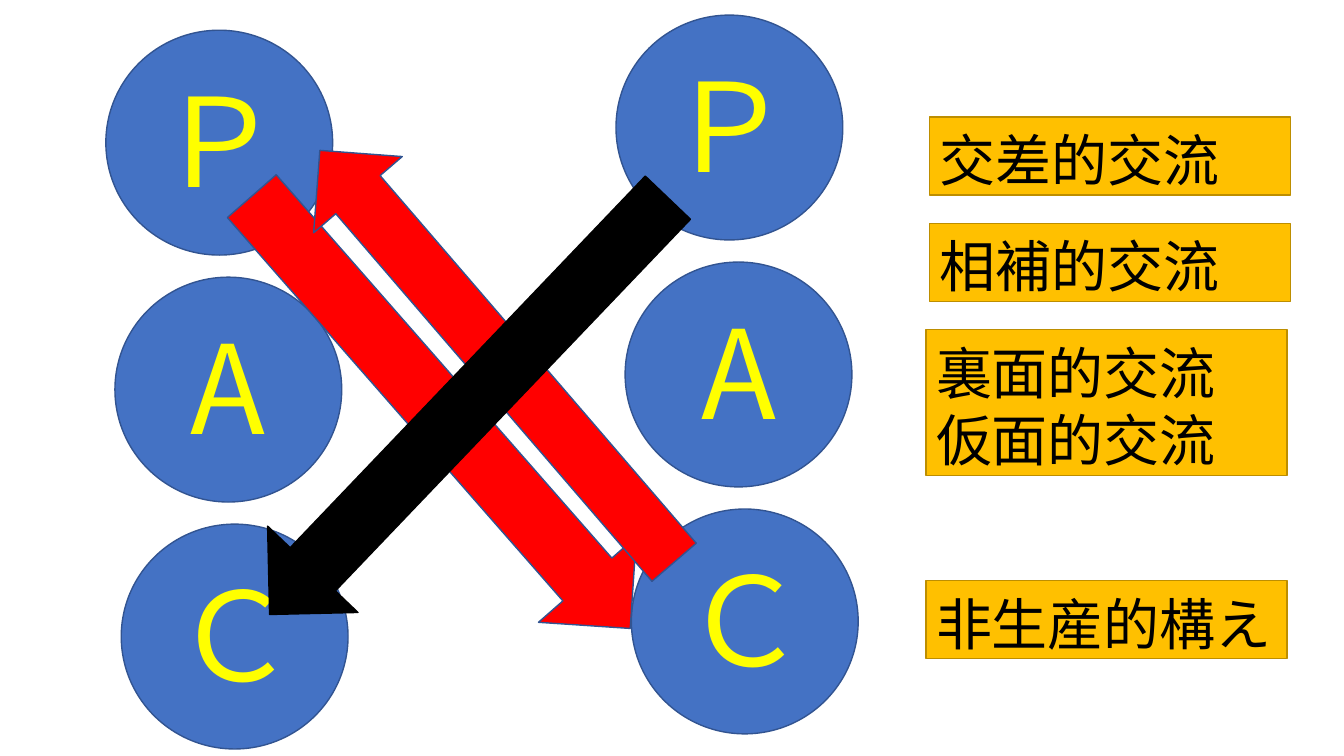
from pptx import Presentation
from pptx import util as u
from pptx.dml.color import RGBColor
from pptx.enum import shapes, text
from pptx.oxml import ns, xmlchemy

COLORS = {
    "circle": "4472C4",
    "outline": "325491",
    "letter": "FFFF00",
    "red": "FF0000",
    "black": "000000",
    "label": "FFC000",
    "label_edge": "BD8E00",
}
FONT = "Noto Sans CJK JP"


class TransactionSlide:
    """Holds the slide and the style of the ego-state diagram; lengths are points."""

    def __init__(self, page):
        self.page = page

    def add_figure(self, kind, left, top, width, height, fill, edge):
        figure = self.page.shapes.add_shape(
            kind, u.Pt(left), u.Pt(top), u.Pt(width), u.Pt(height))
        figure.shadow.inherit = False
        figure.fill.solid()
        figure.fill.fore_color.rgb = RGBColor.from_string(COLORS[fill])
        figure.line.color.rgb = RGBColor.from_string(COLORS[edge])
        figure.line.width = u.Pt(1)
        return figure

    def style_paragraph(self, para, size, color, align):
        para.alignment = align
        para.font.size = u.Pt(size)
        para.font.name = FONT
        para.font.color.rgb = RGBColor.from_string(COLORS[color])
        east_asian = xmlchemy.OxmlElement("a:ea")
        east_asian.set("typeface", FONT)
        para._p.pPr.find(ns.qn("a:defRPr")).append(east_asian)

    def add_circle(self, letter, left, top):
        circle = self.add_figure(
            shapes.MSO_SHAPE.OVAL, left, top, 162, 160.6, "circle", "outline")
        frame = circle.text_frame
        frame.vertical_anchor = text.MSO_ANCHOR.MIDDLE
        frame.margin_bottom = u.Pt(10)
        frame.text = letter
        self.style_paragraph(
            frame.paragraphs[0], 88, "letter", text.PP_ALIGN.CENTER)

    def add_arrow(self, left, top, width, height, angle, fill, edge):
        arrow = self.add_figure(
            shapes.MSO_SHAPE.DOWN_ARROW, left, top, width, height, fill, edge)
        arrow.rotation = angle

    def add_label(self, lines, left, top, height):
        box = self.add_figure(
            shapes.MSO_SHAPE.RECTANGLE, left, top, 257.8, height,
            "label", "label_edge")
        frame = box.text_frame
        frame.word_wrap = True
        frame.vertical_anchor = text.MSO_ANCHOR.TOP
        frame.margin_top = u.Pt(6)
        frame.text = "\n".join(lines)
        for para in frame.paragraphs:
            self.style_paragraph(para, 40, "black", text.PP_ALIGN.LEFT)
            para.line_spacing = u.Pt(48)


def main():
    deck = Presentation()
    deck.slide_width, deck.slide_height = u.Pt(960), u.Pt(540)
    slide = TransactionSlide(deck.slides.add_slide(deck.slide_layouts[6]))

    for shift_x, shift_y in ((0, 0), (364.4, -10.8)):
        for row, (letter, left) in enumerate(
                (("Ｐ", 75.6), ("A", 82.1), ("Ｃ", 86.6))):
            slide.add_circle(
                letter, left + shift_x, 21.6 + 176.4 * row + shift_y)

    slide.add_arrow(268.6, 89.3, 92.9, 410.4, 318.8, "red", "outline")
    slide.add_arrow(313.2, 60.5, 83.5, 388.1, 139.3, "red", "outline")
    slide.add_arrow(290.2, 84.2, 89.3, 411.8, 43.7, "black", "black")

    for lines, left, top, height in (
            (["交差的交流"], 664, 83.5, 55.7),
            (["相補的交流"], 664, 159.5, 55.7),
            (["裏面的交流", "仮面的交流"], 661.5, 235.6, 104.2),
            (["非生産的構え"], 661.5, 414.7, 55.7)):
        slide.add_label(lines, left, top, height)

    deck.save("out.pptx")


if __name__ == "__main__":
    main()
